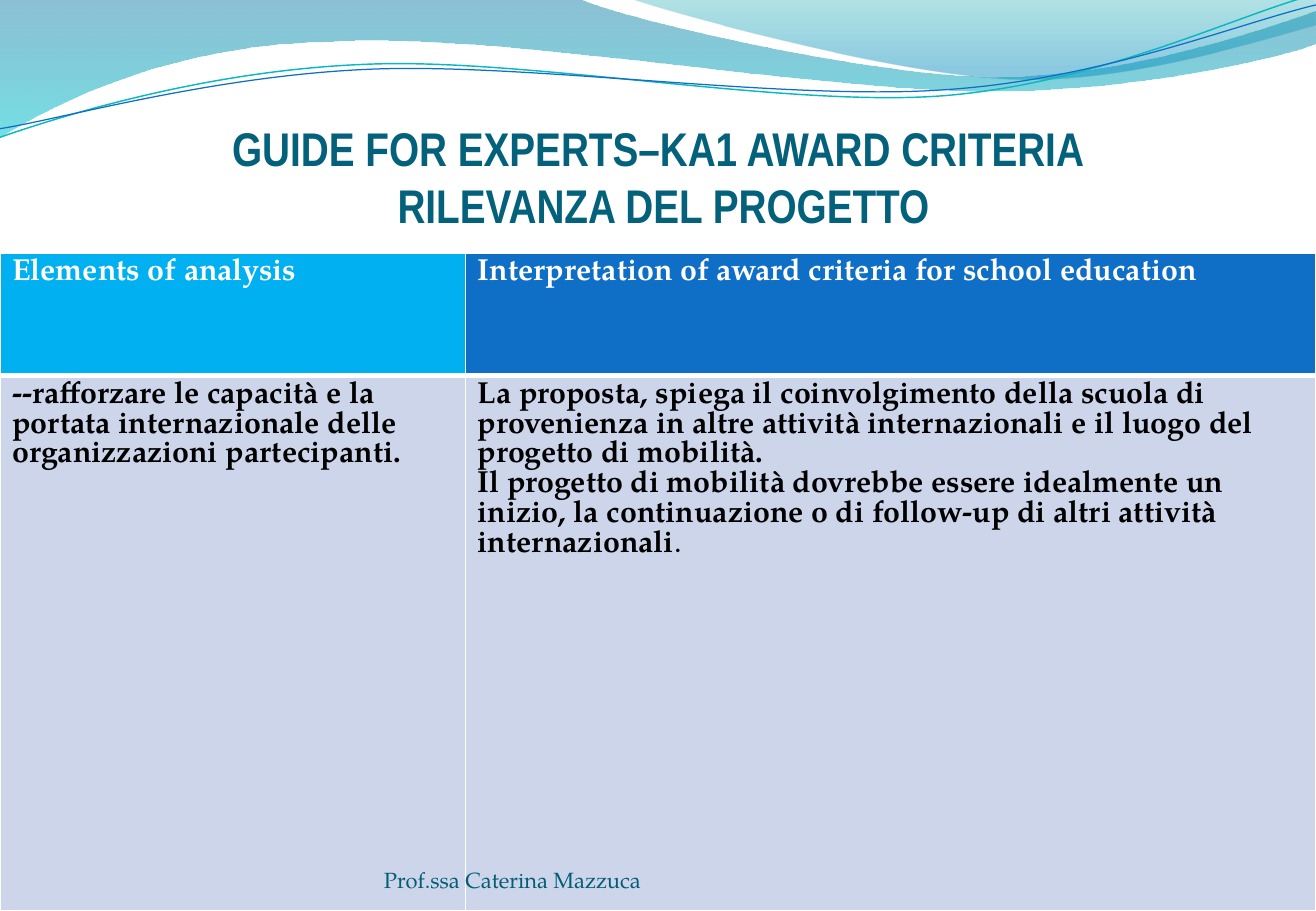
from lxml import etree
from pptx import Presentation
from pptx.dml.color import RGBColor
from pptx.enum.text import MSO_ANCHOR, PP_ALIGN
from pptx.oxml.ns import qn
from pptx.util import Pt

BOTTOM = MSO_ANCHOR.BOTTOM
LEFT, CENTER = PP_ALIGN.LEFT, PP_ALIGN.CENTER
WIDTH, HEIGHT = 780, 540
BODY_FONT = "TeX Gyre Pagella"
BREAK = "\n"

# Outlines: a start point, then segments of one point (line) or three (curve)
WAVE_BAND = [
    (0, 0),
    [(343.5, -0.7)],
    [(371, 12), (518, 45.4), (592, 45.4)],
    [(665, 45.4), (747, 18.7), (780, 6.5)],
    [(780.5, 26)],
    [(767, 31.7), (678, 54.7), (582, 54)],
    [(485, 54), (298, 20.2), (201, 24.5)],
    [(101, 26), (36, 59.8), (-0.7, 81.4)],
]
WAVE_CREST = [
    (373.7, -0.7),
    [(397.4, 8), (532, 44.6), (600, 46.8)],
    [(667.4, 49.7), (750, 23), (780, 15)],
    [(780, 0)],
]
TEAL_LINE = [
    (0, 81.4),
    [(37.4, 68.4), (123, 41.8), (216, 38.2)],
    [(308, 33.8), (462, 63.4), (556, 57)],
    [(649.4, 50.4), (732, 9.4), (778, -2.9)],
]
BLUE_LINE = [
    (0, 76.3),
    [(36.7, 70.6), (127.4, 44.6), (221, 41)],
    [(314, 37.4), (466, 59.8), (558.7, 53.3)],
    [(652, 47.5), (734.4, 13.7), (780, 2.9)],
]

# A paragraph is a list of (text, bold)
TITLE = [[("GUIDE FOR EXPERTS–KA1 AWARD CRITERIA", True), (BREAK, True),
          (" RILEVANZA DEL PROGETTO", True)]]
AUTHOR = [[("Prof.ssa Caterina Mazzuca", False)]]
COLUMN_WIDTHS = [276, 504]
ROW_HEIGHTS = [72.5, 317.5]
HEADER_FILLS = ["00B0F0", "0F6FC6"]
BODY_FILL = "CCD5EA"
ROWS = [
    [
        [[("Elements of analysis", True)]],
        [[("Interpretation of award criteria for school education", True)]],
    ],
    [
        [[("--rafforzare le capacità e la portata internazionale delle "
           "organizzazioni partecipanti.", True)]],
        [
            [("La proposta, spiega il coinvolgimento della scuola di provenienza "
              "in altre attività internazionali e il luogo del progetto di "
              "mobilità.", True)],
            [("Il progetto di mobilità dovrebbe essere idealmente un inizio, la "
              "continuazione o di follow-up di altri attività internazionali", True),
             (".", False)],
        ],
    ],
]


def color(value):
    return RGBColor.from_string(value)


def add_outline(page, outline, close):
    start, *segments = outline
    builder = page.shapes.build_freeform(*map(Pt, start))
    builder.add_line_segments(
        [(Pt(x), Pt(y)) for segment in segments for x, y in segment], close=close)
    shape = builder.convert_to_shape()
    shape.shadow.inherit = False
    # Turn each run of three points into one curve
    steps = iter(list(shape._element.iter(qn("a:lnTo"))))
    for segment in segments:
        first, *others = [next(steps) for _ in segment]
        if others:
            first.tag = qn("a:cubicBezTo")
            for step in others:
                first.append(step[0])
                step.getparent().remove(step)
    return shape


def add_wave(page, outline, stops):
    """Filled wave; stops are (position, colour, opacity in percent)."""
    shape = add_outline(page, outline, True)
    shape.line.fill.background()
    shape.fill.gradient()
    shape.fill.gradient_angle = 270
    for stop, (position, value, _) in zip(shape.fill.gradient_stops, stops):
        stop.position = position
        stop.color.rgb = color(value)
    for node, (_, _, opacity) in zip(shape._element.spPr.iter(qn("a:srgbClr")), stops):
        etree.SubElement(node, qn("a:alpha"), val=str(opacity * 1000))


def add_wave_line(page, outline, value, width):
    shape = add_outline(page, outline, False)
    shape.fill.background()
    shape.line.color.rgb = color(value)
    shape.line.width = Pt(width)


def write(frame, paragraphs, value, font, alignment=LEFT):
    for index, spans in enumerate(paragraphs):
        para = frame.paragraphs[0] if index == 0 else frame.add_paragraph()
        para.alignment = alignment
        for text, bold in spans:
            if text == BREAK:
                para.add_line_break()
                continue
            span = para.add_run()
            span.text = text
            span.font.color.rgb = color(value)
            for name, setting in {**font, "bold": bold}.items():
                setattr(span.font, name, setting)


def add_text(page, place, paragraphs, value, font, alignment=LEFT, top=0):
    box = page.shapes.add_textbox(*map(Pt, place))
    frame = box.text_frame
    layout = {"word_wrap": True, "vertical_anchor": BOTTOM, "margin_left": 0,
              "margin_right": 0, "margin_top": Pt(top), "margin_bottom": 0}
    for name, setting in layout.items():
        setattr(frame, name, setting)
    write(frame, paragraphs, value, font, alignment)


def add_borders(cell, widths):
    properties = cell._tc.get_or_add_tcPr()
    for side, width in widths.items():
        line = etree.SubElement(properties, qn("a:ln" + side), w=str(Pt(width)))
        fill = etree.SubElement(line, qn("a:solidFill"))
        etree.SubElement(fill, qn("a:srgbClr"), val="FFFFFF")


def add_criteria_table(page):
    frame = page.shapes.add_table(len(ROWS), len(COLUMN_WIDTHS), 0, Pt(150),
                                  Pt(WIDTH), Pt(sum(ROW_HEIGHTS)))
    table = frame.table
    table.horz_banding = False
    for column, width in zip(table.columns, COLUMN_WIDTHS):
        column.width = Pt(width)
    for row, height in zip(table.rows, ROW_HEIGHTS):
        row.height = Pt(height)
    for row, contents in enumerate(ROWS):
        header = row == 0
        for column, paragraphs in enumerate(contents):
            cell = table.cell(row, column)
            add_borders(cell, {"L": 1, "R": 1, "T": 1 if header else 3,
                               "B": 3 if header else 1})
            cell.fill.solid()
            cell.fill.fore_color.rgb = color(HEADER_FILLS[column] if header else BODY_FILL)
            write(cell.text_frame, paragraphs, "FFFFFF" if header else "000000",
                  {"name": BODY_FONT, "size": Pt(18)})


def main():
    deck = Presentation()
    deck.slide_width, deck.slide_height = Pt(WIDTH), Pt(HEIGHT)
    page = deck.slides.add_slide(deck.slide_layouts[6])

    # Wave banner
    add_wave(page, WAVE_BAND, [(0, "0074A1", 45), (1, "00C6CF", 55)])
    add_wave(page, WAVE_CREST, [(0, "00A1A9", 30), (0.8, "008BBF", 45)])
    add_wave_line(page, TEAL_LINE, "0AB8BF", 0.85)
    add_wave_line(page, BLUE_LINE, "0F6FC6", 0.75)

    # Title
    add_text(page, (39, 55.4, 702, 82.8), TITLE, "04617B",
             {"name": "Arial Narrow", "size": Pt(28)}, CENTER, top=3.6)

    # Criteria and author
    add_criteria_table(page)
    add_text(page, (227.5, 500.4, 286, 28.8), AUTHOR, "045D75",
             {"name": BODY_FONT, "size": Pt(13)})

    deck.save("out.pptx")


if __name__ == "__main__":
    main()
